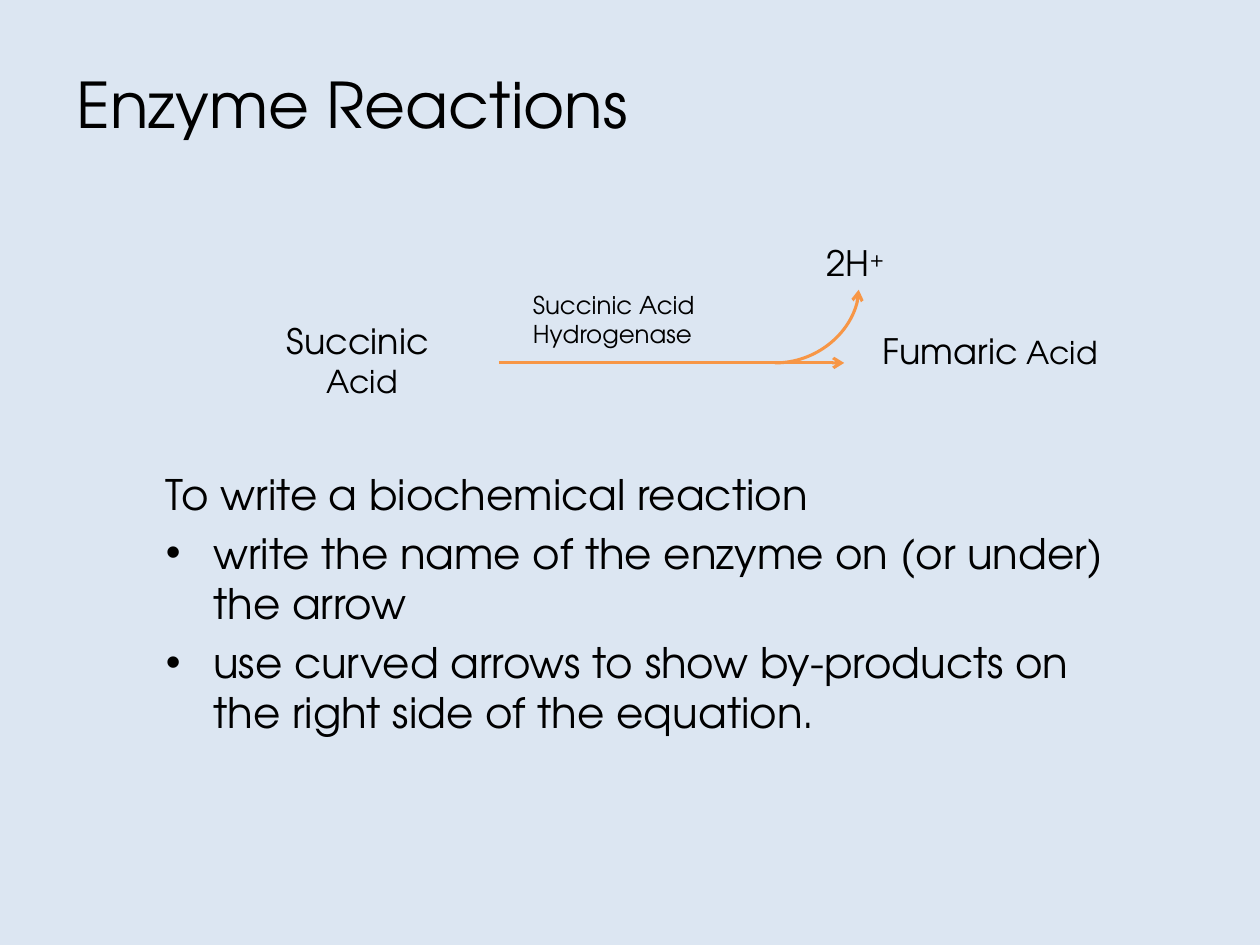
from lxml import etree
from pptx import Presentation
from pptx.dml.color import RGBColor
from pptx.enum.shapes import MSO_CONNECTOR
from pptx.enum.text import MSO_ANCHOR, PP_ALIGN
from pptx.oxml.ns import qn
from pptx.util import Pt

STRAIGHT, CURVE = MSO_CONNECTOR.STRAIGHT, MSO_CONNECTOR.CURVE
LEFT, CENTER = PP_ALIGN.LEFT, PP_ALIGN.CENTER
TOP, BOTTOM = MSO_ANCHOR.TOP, MSO_ANCHOR.BOTTOM

FONT = "TeX Gyre Adventor"
COLORS = {"background": "DCE6F2", "text": "000000", "arrow": "F79646"}
BULLET_INDENT = 27
ARROW_Y = 207.4


def color(name):
    return RGBColor.from_string(COLORS[name])


def set_format(target, **values):
    for name, value in values.items():
        setattr(target, name, value)


def add_span(para, text, size, superscript=False):
    span = para.add_run()
    span.text = text
    set_format(span.font, name=FONT, size=Pt(size))
    span.font.color.rgb = color("text")
    if superscript:
        span._r.get_or_add_rPr().set("baseline", "30000")


def add_text(page, place, paragraphs, align=LEFT, anchor=TOP, space=0):
    """Add a text box; each paragraph is a list of (text, size[, superscript])."""
    box = page.shapes.add_textbox(*map(Pt, place))
    frame = box.text_frame
    set_format(frame, word_wrap=True, vertical_anchor=anchor)
    for index, spans in enumerate(paragraphs):
        para = frame.add_paragraph() if index else frame.paragraphs[0]
        set_format(para, alignment=align, space_before=Pt(space))
        for span in spans:
            add_span(para, *span)
    return frame


def add_bullet(para):
    properties = para._p.get_or_add_pPr()
    properties.set("marL", str(Pt(BULLET_INDENT)))
    properties.set("indent", str(-Pt(BULLET_INDENT)))
    etree.SubElement(properties, qn("a:buFont"), typeface="Arial")
    etree.SubElement(properties, qn("a:buChar"), char="•")


def add_arrow(page, kind, start, end):
    arrow = page.shapes.add_connector(kind, *map(Pt, start + end))
    arrow.line.width = Pt(1.75)
    arrow.line.color.rgb = color("arrow")
    etree.SubElement(arrow.line._get_or_add_ln(), qn("a:tailEnd"), type="arrow")
    properties = arrow._element.spPr
    etree.SubElement(properties, qn("a:effectLst"))
    if kind == CURVE:
        # A quarter bend needs the two-segment preset
        properties.find(qn("a:prstGeom")).set("prst", "curvedConnector2")


def add_reaction(page):
    add_text(page, (156.2, 179.3, 101.5, 53.3),
             [[("Succinic", 20), (" ", 18)], [("Acid", 18)]], align=CENTER)
    add_text(page, (482.4, 185, 167, 31.7),
             [[("Fumaric", 20), (" Acid", 18)]], align=CENTER)
    add_text(page, (465.1, 134.6, 50.4, 31.7), [[("2H", 20), ("+", 20, True)]])
    add_text(page, (297.4, 162, 185.8, 41), [[("Succinic Acid Hydrogenase", 14)]])
    add_arrow(page, STRAIGHT, (285.1, ARROW_Y), (482.4, ARROW_Y))
    add_arrow(page, CURVE, (442.8, ARROW_Y), (490.7, 165.6))


def add_instructions(page):
    lines = [
        "To write a biochemical reaction",
        "write the name of the enzyme on (or under) the arrow",
        "use curved arrows to show by-products on the right side of the equation.",
    ]
    frame = add_text(page, (87.8, 264.2, 561.6, 198.7),
                     [[(line, 24)] for line in lines], space=4.8)
    for para in frame.paragraphs[1:]:
        add_bullet(para)


def main():
    deck = Presentation()
    set_format(deck, slide_width=Pt(720), slide_height=Pt(540))
    page = deck.slides.add_slide(deck.slide_layouts[6])
    page.background.fill.solid()
    page.background.fill.fore_color.rgb = color("background")
    add_text(page, (36.7, 43.2, 462.2, 41), [[("Enzyme Reactions", 36)]], anchor=BOTTOM)
    add_instructions(page)
    add_reaction(page)
    deck.save("out.pptx")


if __name__ == "__main__":
    main()
